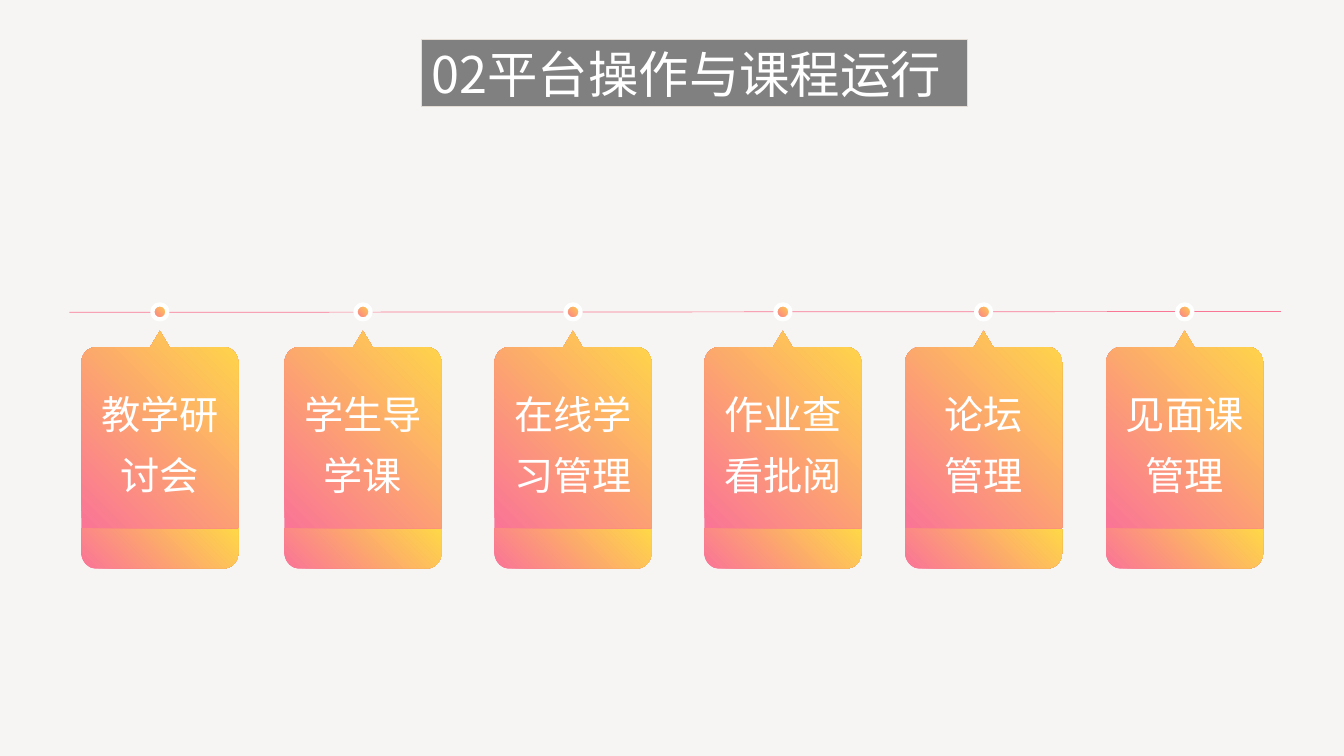
from math import cos, radians, sin

from lxml.etree import SubElement
from pptx import Presentation
from pptx.dml.color import RGBColor
from pptx.enum.shapes import MSO_CONNECTOR, MSO_SHAPE
from pptx.enum.text import MSO_ANCHOR, MSO_AUTO_SIZE, PP_ALIGN
from pptx.oxml.ns import qn
from pptx.util import Pt

FONT = "Noto Sans CJK SC"
color = RGBColor.from_string


def fill_sunset(shape):
    """Fill from pink at bottom left to yellow at top right, without shadow."""
    shape.shadow.inherit = False
    shape.fill.gradient()
    shape.fill.gradient_angle = 45
    for stop, position, tone in zip(shape.fill.gradient_stops, (0.01, 0.98), ("FA7596", "FED648")):
        stop.position = position
        stop.color.rgb = color(tone)


def write(frame, text, size, align, spacing):
    frame.text = text
    frame.word_wrap = True
    frame.auto_size = MSO_AUTO_SIZE.NONE
    frame.vertical_anchor = MSO_ANCHOR.MIDDLE
    for paragraph in frame.paragraphs:
        paragraph.alignment = align
        paragraph.line_spacing = spacing
        for run in paragraph.runs:
            run.font.size = Pt(size)
            run.font.color.rgb = color("FFFFFF")
            run.font.name = FONT
            SubElement(run.font._element, qn("a:ea"), typeface=FONT)


deck = Presentation()
deck.slide_width, deck.slide_height = Pt(960), Pt(540)
slide = deck.slides.add_slide(deck.slide_layouts[5])
slide.background.fill.solid()
slide.background.fill.fore_color.rgb = color("F7F5F3")

# Heading
heading = slide.shapes.title
heading.left, heading.top, heading.width, heading.height = Pt(301), Pt(28.4), Pt(390), Pt(47.6)
heading.fill.solid()
heading.fill.fore_color.rgb = color("808080")
heading.line.color.rgb = color("E3DDD6")
heading.line.width = Pt(0.75)
write(heading.text_frame, "02平台操作与课程运行", 36, PP_ALIGN.LEFT, 1)

# Timeline
timeline = slide.shapes.add_connector(MSO_CONNECTOR.STRAIGHT, Pt(49.5), Pt(223.1), Pt(915), Pt(222.5))
timeline.line.color.rgb = color("FA7695")
timeline.line.width = Pt(0.5)
SubElement(timeline._element.spPr, qn("a:effectLst"))

# Steps: a dot on the timeline and a two-part card pointing up at it
DOT, DOT_TOP = 10.8, 217.4
CARD_WIDTH, TIP, TOP, SEAM, BOTTOM = 112.2, 236.4, 247.9, 377.3, 406.1
RADIUS_X, RADIUS_Y, POINTER = 10.5, 11.5, 6.9
steps = [
    (58.1, "教学研讨会"),
    (203.2, "学生导学课"),
    (353.2, "在线学习管理"),
    (503.1, "作业查看批阅"),
    (646.5, "论坛\n管理"),
    (790.1, "见面课管理"),
]
for left, label in steps:
    right, center = left + CARD_WIDTH, left + CARD_WIDTH / 2

    dot = slide.shapes.add_shape(
        MSO_SHAPE.OVAL, Pt(center - DOT / 2), Pt(DOT_TOP), Pt(DOT), Pt(DOT))
    fill_sunset(dot)
    dot.line.color.rgb = color("FEFFFF")
    dot.line.width = Pt(3)

    # Corner arcs run clockwise, from 0 degrees at the right
    arcs = {}
    for start, x, y in (
        (0, right - RADIUS_X, BOTTOM - RADIUS_Y),
        (90, left + RADIUS_X, BOTTOM - RADIUS_Y),
        (180, left + RADIUS_X, TOP + RADIUS_Y),
        (270, right - RADIUS_X, TOP + RADIUS_Y),
    ):
        angles = [radians(start + step) for step in range(0, 91, 10)]
        arcs[start] = [(x + RADIUS_X * cos(a), y + RADIUS_Y * sin(a)) for a in angles]

    foot_outline = [(left, SEAM), (right, SEAM), *arcs[0], *arcs[90]]
    body_outline = [
        (center, TIP), (center + POINTER, TOP), *arcs[270],
        (right, SEAM), (left, SEAM), *arcs[180], (center - POINTER, TOP),
    ]
    card = slide.shapes.add_group_shape()
    for outline in (foot_outline, body_outline):
        points = [(Pt(x), Pt(y)) for x, y in outline]
        builder = card.shapes.build_freeform(*points[0])
        builder.add_line_segments(points[1:], close=True)
        part = builder.convert_to_shape()
        fill_sunset(part)
        part.line.fill.background()

    body_text = part.text_frame
    body_text.margin_left = body_text.margin_right = Pt(7.2)
    body_text.margin_top, body_text.margin_bottom = Pt(14.4), Pt(3.6)
    write(body_text, label, 28, PP_ALIGN.CENTER, 1.3)

deck.save("out.pptx")
